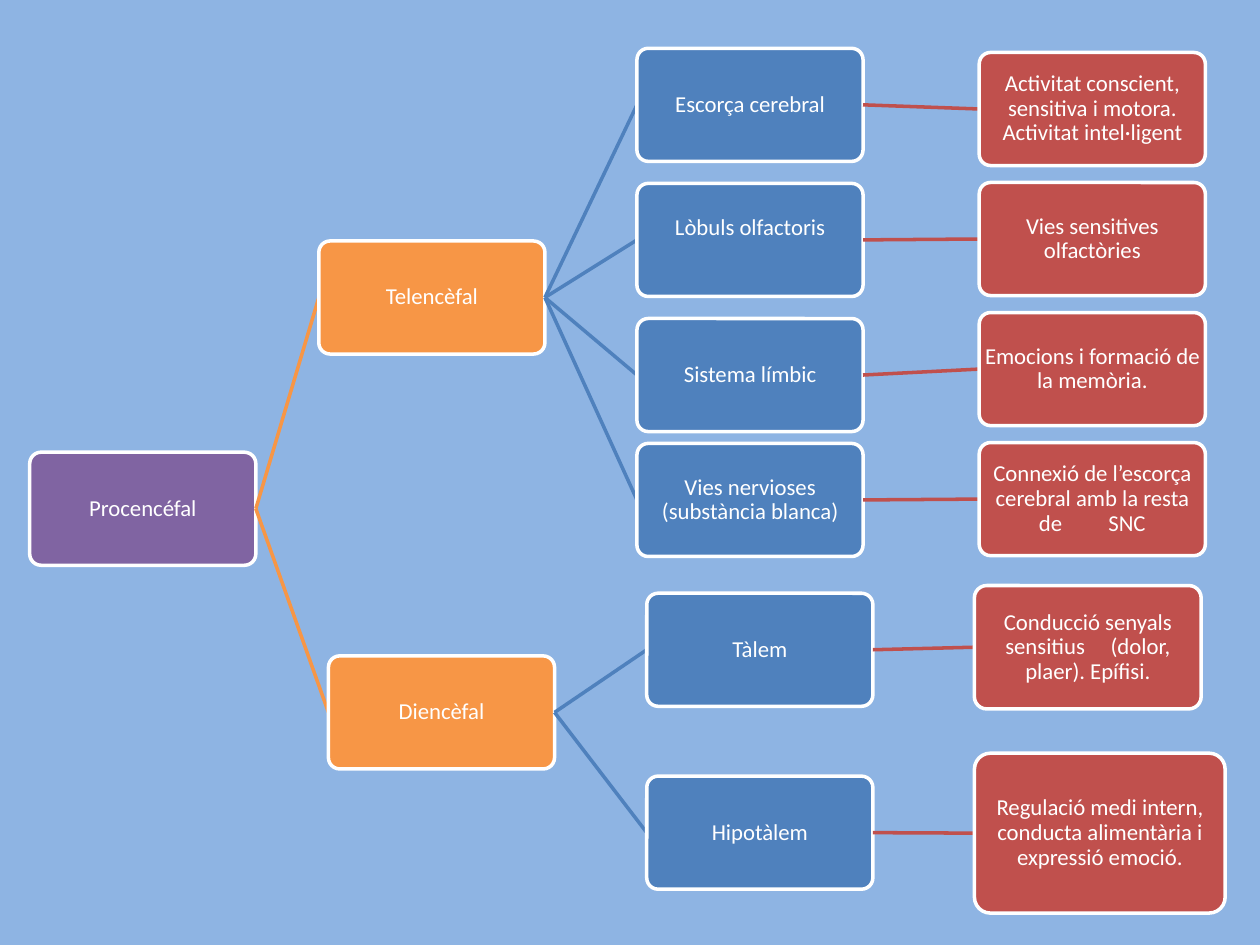
from dataclasses import dataclass
from pptx import Presentation
from pptx.dml.color import RGBColor as Rgb
from pptx.enum.shapes import MSO_CONNECTOR as Link, MSO_SHAPE as Form
from pptx.enum.text import MSO_ANCHOR as Anchor, PP_ALIGN as Align
from pptx.oxml.ns import qn
from pptx.util import Pt
from lxml.etree import SubElement

HUES = {"back": "8EB4E3", "root": "8064A2", "part": "F79646",
        "area": "4F81BD", "role": "C0504D", "white": "FFFFFF"}
WIDE, HIGH = 129.2, 64.6
LEFT, RIGHT = 1, 3  # connection sites of a box


@dataclass
class Node:
    hue: str
    text: str  # "|" marks a wide gap between words
    x: float
    y: float
    kids: tuple = ()
    w: float = WIDE
    h: float = HIGH
    gap: float = 0  # extra width of the wide gap
    foot: float = 1  # bottom inset


class Chart:
    font, size, edge = "Calibri", 13, 2

    def __init__(self, slide):
        self.slide = slide

    def tint(self, hue):
        return Rgb.from_string(HUES[hue])

    def back(self, hue):
        fill = self.slide.background.fill
        fill.solid()
        fill.fore_color.rgb = self.tint(hue)

    def run(self, para, text, gap=0):
        run = para.add_run()
        run.text = text
        run.font.name, run.font.size = self.font, Pt(self.size)
        run.font.color.rgb = self.tint("white")
        if gap:
            run._r.get_or_add_rPr().set("spc", str(round(gap * 100)))

    def box(self, node):
        box = self.slide.shapes.add_shape(
            Form.ROUNDED_RECTANGLE, Pt(node.x), Pt(node.y), Pt(node.w), Pt(node.h))
        box.adjustments[0] = 0.1
        box.shadow.inherit = False
        box.fill.solid()
        box.fill.fore_color.rgb = self.tint(node.hue)
        box.line.color.rgb = self.tint("white")
        box.line.width = Pt(self.edge)
        frame = box.text_frame
        frame.word_wrap = True
        frame.vertical_anchor = Anchor.MIDDLE
        frame.margin_left = frame.margin_right = frame.margin_top = Pt(1)
        frame.margin_bottom = Pt(node.foot)
        para = frame.paragraphs[0]
        para.alignment, para.line_spacing = Align.CENTER, 0.9
        for i, part in enumerate(node.text.split("|")):
            if i:
                self.run(para, " ", node.gap)
            self.run(para, part)
        return box

    def link(self, hue):
        line = self.slide.shapes.add_connector(Link.STRAIGHT, 0, 0, 0, 0)
        line.line.color.rgb = self.tint(hue)
        line.line.width = Pt(self.edge)
        SubElement(line._element.spPr, qn("a:effectLst"))
        return line

    def tree(self, node, above=None):
        # The link lies over its parent box and under its child box
        line = self.link(node.hue) if above is not None else None
        box = self.box(node)
        if line is not None:
            line.begin_connect(above, RIGHT)
            line.end_connect(box, LEFT)
        for kid in node.kids:
            self.tree(kid, box)


# Upper branch: areas with their roles, roles evenly spaced
UPPER = [
    (27.6, "Escorça cerebral", 1,
     "Activitat conscient, sensitiva i motora. Activitat intel·ligent", 0),
    (104.8, "Lòbuls olfactoris", 14, "Vies sensitives olfactòries", 0),
    (182, "Sistema límbic", 1, "Emocions i formació de la memòria.", 0),
    (253.4, "Vies nervioses (substància blanca)", 1,
     "Connexió de l’escorça cerebral amb la resta de|SNC", 23.5),
]
upper = tuple(
    Node("area", area, 364, y, foot=foot, kids=(
        Node("role", role, 559.6, 30 + 74.3 * i, gap=gap),))
    for i, (y, area, foot, role, gap) in enumerate(UPPER))

# Lower branch: roles in larger boxes
lower = (
    Node("area", "Tàlem", 369.6, 339, kids=(
        Node("role", "Conducció senyals sensitius|(dolor, plaer). Epífisi.",
             556.8, 334.6, w=129.6, h=70.5, gap=11.8),)),
    Node("area", "Hipotàlem", 369.6, 443.5, kids=(
        Node("role", "Regulació medi intern, conducta alimentària i expressió emoció.",
             556.8, 430.4, w=143.3, h=91.4),)),
)

root = Node("root", "Procencéfal", 17, 258.4, kids=(
    Node("part", "Telencèfal", 182.2, 137.7, kids=upper),
    Node("part", "Diencèfal", 187.7, 374.8, kids=lower)))

deck = Presentation()
deck.slide_width, deck.slide_height = Pt(720), Pt(540)
chart = Chart(deck.slides.add_slide(deck.slide_layouts[6]))
chart.back("back")
chart.tree(root)
deck.save("out.pptx")
